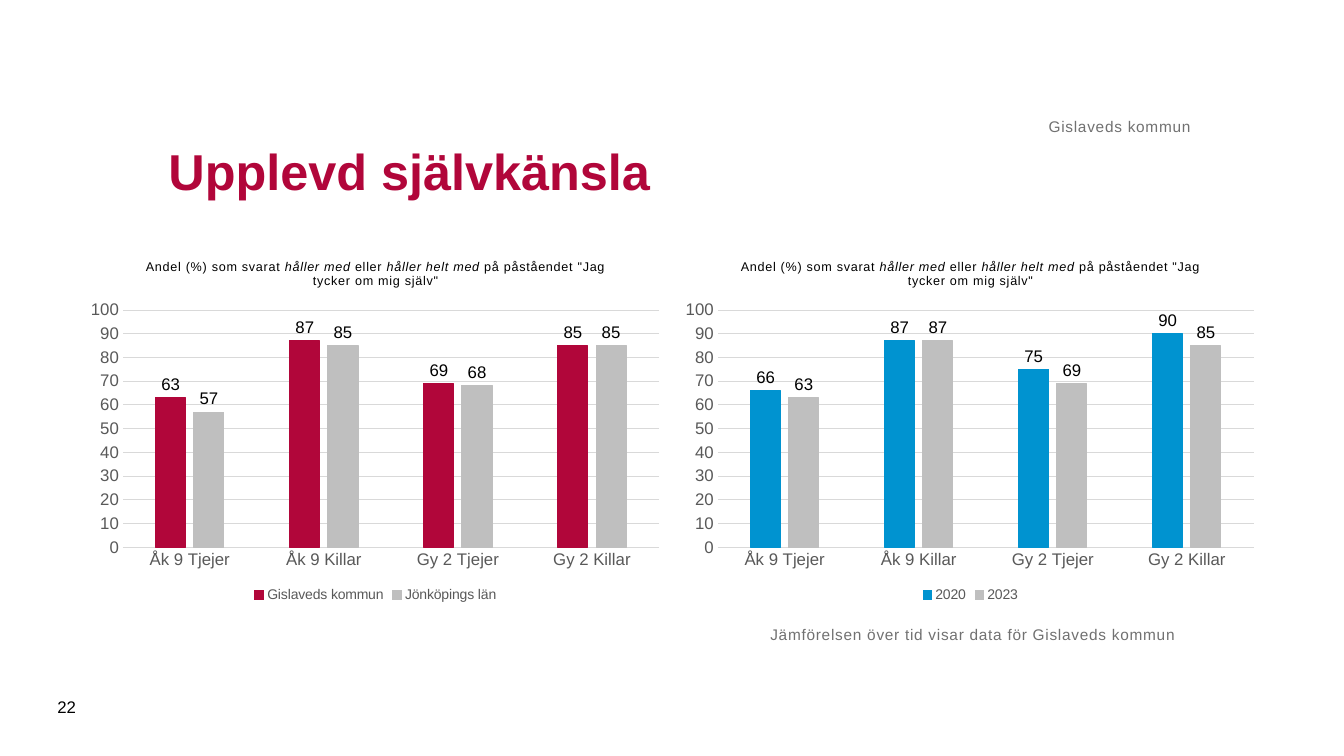
from dataclasses import dataclass

from lxml.etree import SubElement
from pptx import Presentation
from pptx.chart.data import CategoryChartData
from pptx.dml.color import RGBColor
from pptx.enum.chart import XL_CHART_TYPE, XL_LABEL_POSITION, XL_LEGEND_POSITION, XL_TICK_MARK
from pptx.enum.text import MSO_ANCHOR, PP_ALIGN
from pptx.oxml.ns import qn
from pptx.util import Inches, Pt


@dataclass(frozen=True)
class Theme:
    font: str = "Arial"
    red: str = "B1063A"
    blue: str = "0093D0"
    silver: str = "BFBFBF"
    grid: str = "D9D9D9"
    axis: str = "595959"
    note: str = "717171"
    black: str = "000000"
    title: int = 36
    label: int = 12
    body: int = 11
    legend: int = 10
    caption: int = 9
    line: float = 0.75


T = Theme()


def style(font, size, color, bold=False):
    font.name, font.size, font.bold = T.font, Pt(size), bold
    font.color.rgb = RGBColor.from_string(color)


def set_line(line, color):
    line.color.rgb = RGBColor.from_string(color)
    line.width = Pt(T.line)


prs = Presentation()
prs.slide_width, prs.slide_height = Inches(13.33), Inches(7.5)
s = prs.slides.add_slide(prs.slide_layouts[5])

title = s.shapes.title
title.left, title.top, title.width, title.height = Inches(1.57), Inches(0.98), Inches(10.24), Inches(1.42)
tf = title.text_frame
tf.text = "Upplevd självkänsla"
tf.vertical_anchor = MSO_ANCHOR.MIDDLE
tf.paragraphs[0].alignment = PP_ALIGN.LEFT
style(tf.paragraphs[0].runs[0].font, T.title, T.red, True)

categories = ["Åk 9 Tjejer", "Åk 9 Killar", "Gy 2 Tjejer", "Gy 2 Killar"]
caption = [
    ("Andel (%) som svarat ", False),
    ("håller med", True),
    (" eller ", False),
    ("håller helt med", True),
    (' på påståendet "Jag tycker om mig själv"', False),
]
number_format = "#,##0;#,##0"
plot_layout = {"layoutTarget": "inner", "xMode": "edge", "yMode": "edge",
               "x": 0.073, "y": 0.187, "w": 0.906, "h": 0.65}
charts = [
    (0.79, [("Gislaveds kommun", T.red, (63, 87, 69, 85)),
            ("Jönköpings län", T.silver, (57, 85, 68, 85))]),
    (6.69, [("2020", T.blue, (66, 87, 75, 90)),
            ("2023", T.silver, (63, 87, 69, 85))]),
]

for left, series in charts:
    data = CategoryChartData(number_format=number_format)
    data.categories = categories
    for name, color, values in series:
        data.add_series(name, values)
    chart = s.shapes.add_chart(XL_CHART_TYPE.COLUMN_CLUSTERED, Inches(left), Inches(2.4),
                               Inches(5.87), Inches(3.62), data).chart
    style(chart.font, T.legend, T.black)

    chart.has_title = True
    p = chart.chart_title.text_frame.paragraphs[0]
    for text, italic in caption:
        r = p.add_run()
        r.text = text
        style(r.font, T.caption, T.black)
        r.font.italic = italic
        r.font._element.set("spc", "50")
    chart.chart_title.include_in_layout = False

    chart.has_legend = True
    chart.legend.position = XL_LEGEND_POSITION.BOTTOM
    chart.legend.include_in_layout = False
    style(chart.legend.font, T.legend, T.axis)

    for axis in (chart.category_axis, chart.value_axis):
        axis.major_tick_mark = axis.minor_tick_mark = XL_TICK_MARK.NONE
        style(axis.tick_labels.font, T.label, T.axis)
    set_line(chart.category_axis.format.line, T.grid)
    axis = chart.value_axis
    axis.minimum_scale, axis.maximum_scale, axis.major_unit = 0, 100, 10
    axis.tick_labels.number_format = number_format
    axis.tick_labels.number_format_is_linked = False
    axis.format.line.fill.background()
    set_line(axis.major_gridlines.format.line, T.grid)

    plot = chart.plots[0]
    plot.gap_width, plot.overlap, plot.vary_by_categories = 219, -27, False
    for bars, (name, color, values) in zip(plot.series, series):
        bars.format.fill.solid()
        bars.format.fill.fore_color.rgb = RGBColor.from_string(color)
        set_line(bars.format.line, color)
        labels = bars.data_labels
        labels.show_value = True
        labels.position = XL_LABEL_POSITION.OUTSIDE_END
        labels.number_format, labels.number_format_is_linked = number_format, False
        style(labels.font, T.label, T.black)

    area = chart.element.find(".//" + qn("c:plotArea"))
    for old in area.findall(qn("c:layout")):
        area.remove(old)
    layout = SubElement(area, qn("c:layout"))
    area.insert(0, layout)
    manual = SubElement(layout, qn("c:manualLayout"))
    for tag, value in plot_layout.items():
        SubElement(manual, qn("c:" + tag)).set("val", str(value))

notes = [
    ("Gislaveds kommun", (1.57, 0.62, 10.24, 0.73), MSO_ANCHOR.BOTTOM, PP_ALIGN.RIGHT, T.body, T.note, 0, 50),
    ("22", (0.47, 6.81, 0.57, 0.4), MSO_ANCHOR.MIDDLE, PP_ALIGN.LEFT, T.label, T.black, 0.1, 0),
    ("Jämförelsen över tid visar data för Gislaveds kommun", (7.64, 6.2, 5.31, 0.94),
     MSO_ANCHOR.TOP, PP_ALIGN.LEFT, T.body, T.note, 0, 50),
]
for text, box, anchor, align, size, color, inset, spacing in notes:
    tf = s.shapes.add_textbox(*map(Inches, box)).text_frame
    tf.word_wrap = True
    tf.vertical_anchor = anchor
    tf.margin_left = tf.margin_right = Inches(inset)
    tf.margin_top = tf.margin_bottom = Inches(inset / 2)
    tf.text = text
    p = tf.paragraphs[0]
    p.alignment = align
    r = p.runs[0]
    style(r.font, size, color)
    r._r.get_or_add_rPr().set("spc", str(spacing))

prs.save("out.pptx")
